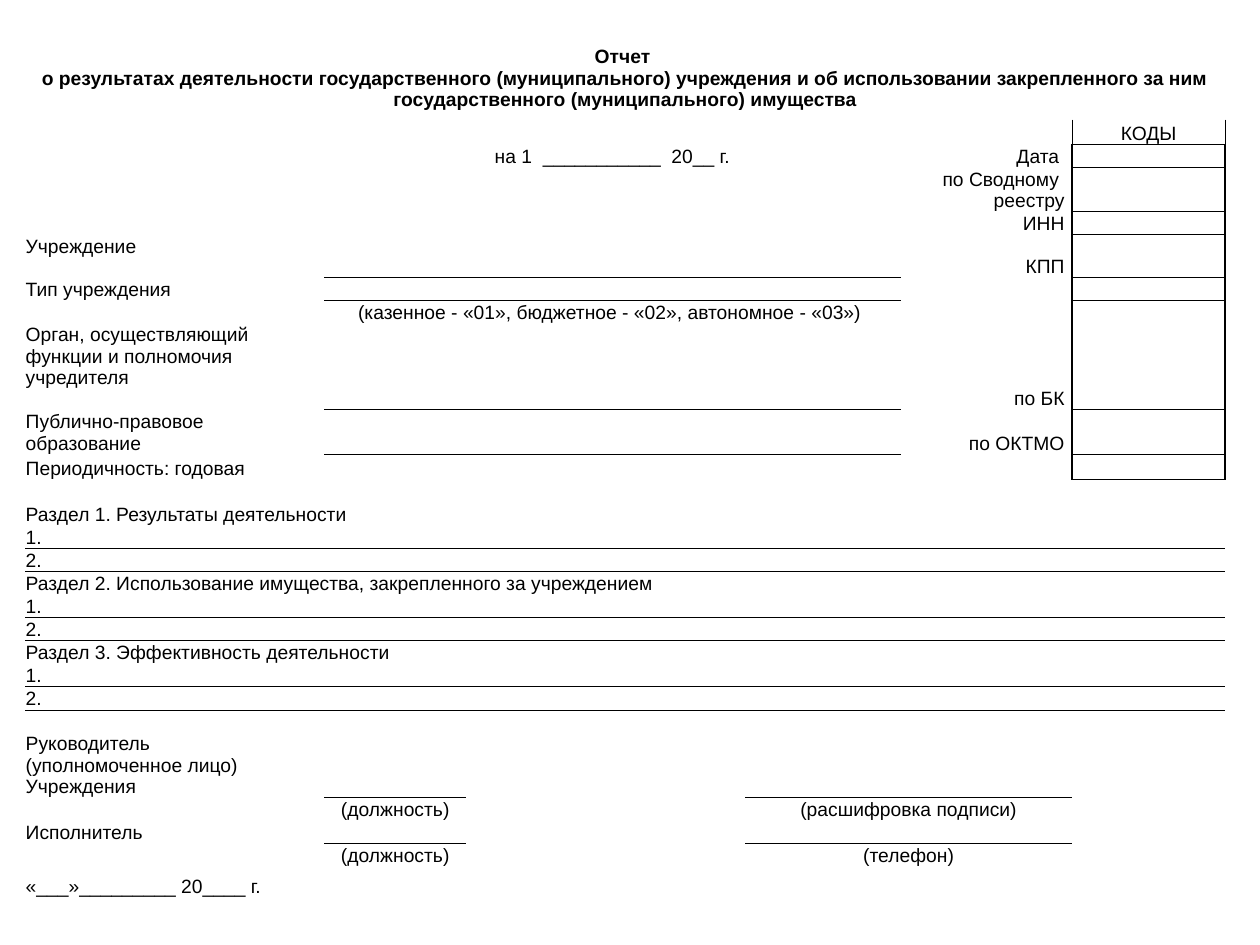
from lxml import etree
from pptx import Presentation
from pptx.dml.color import RGBColor
from pptx.enum import text as t
from pptx.oxml import ns
from pptx.util import Pt

THEME = {
    "font": "Arial", "size": 11, "empty": 8,
    "ink": "000000", "paper": "FFFFFF",
    "thin": 0.5, "bold": 1,
    "pad": 0.7, "side": 0.3, "gap": 4.3,
    "style": "{2D5ABB26-0587-4C30-8999-92F81FD0307C}",  # no style, no grid
}
LEFT, TOP = 14.4, 20.6
LINE = 13.2
COLS = [171, 81, 78, 81.5, 88.8, 98, 87.5]
ROWS = ([47.7, 14.2, 13.2, 25.1, 13.2, 24.6, 13.1, 13.1, 49.1, 25.7, 14.3]
        + [LINE] * 10 + [12.7, 36.7] + [LINE] * 3 + [22.3])

TITLE = ["Отчет ", "о результатах деятельности государственного (муниципального) "
         "учреждения и об использовании закрепленного за ним "
         "государственного (муниципального) имущества"]
DATE = "на 1  ___________  20__ г."
TYPES = "(казенное - «01», бюджетное - «02», автономное - «03») "
# row: lines of the label at the left
LABELS = {
    5: ["Учреждение"],
    6: ["Тип учреждения"],
    8: ["Орган, осуществляющий ", "функции и полномочия учредителя"],
    9: ["Публично-правовое образование"],
    10: ["Периодичность: годовая"],
    22: ["Руководитель ", "(уполномоченное лицо) Учреждения"],
    24: ["Исполнитель"],
    26: ["«___»_________ 20____ г."],
}
# row: lines of the label beside the code box
CODES = {
    2: ["Дата "],
    3: ["по Сводному ", "реестру"],
    4: ["ИНН"],
    5: ["КПП"],
    8: ["по БК"],
    9: ["по ОКТМО"],
}
PARTS = [
    "Раздел 1. Результаты деятельности",
    "Раздел 2. Использование имущества, закрепленного за учреждением",
    "Раздел 3. Эффективность деятельности",
]
ITEMS = ["1.", "2."]
# row, caption under the post line, caption under the wide line
SIGNS = [(23, "(должность)", "(расшифровка подписи)"),
         (25, "(должность)", "(телефон)")]

PART_ROW = 12
STEP = 1 + len(ITEMS)
CODE = 6
FIRST, LAST = 2, 10  # rows of the code box
MID, LOW, HIGH = (t.MSO_ANCHOR.MIDDLE, t.MSO_ANCHOR.BOTTOM, t.MSO_ANCHOR.TOP)
NEAR, MEET, FAR = t.PP_ALIGN.LEFT, t.PP_ALIGN.CENTER, t.PP_ALIGN.RIGHT


def write(grid, row, col, lines, span=1, align=NEAR, anchor=LOW,
          right=None, bold=False):
    cell = grid.cell(row, col)
    if span > 1:
        cell.merge(grid.cell(row, col + span - 1))
    cell.vertical_anchor = anchor
    if right is not None:
        cell.margin_right = Pt(right)
    para = cell.text_frame.paragraphs[0]
    para.alignment = align
    for i, line in enumerate(lines):
        if i:
            para.add_line_break()
        run = para.add_run()
        run.text = line
        run.font.name = THEME["font"]
        run.font.size = Pt(THEME["size"])
        run.font.bold = bold
        run.font.color.rgb = RGBColor.from_string(THEME["ink"])


def fill(grid):
    write(grid, 0, 0, TITLE, len(COLS), MEET, MID, bold=True)
    write(grid, 1, CODE, ["КОДЫ"], align=MEET)
    write(grid, 2, 1, [DATE], 4, MEET)
    write(grid, 7, 1, [TYPES], 4, MEET)
    for row, lines in LABELS.items():
        anchor = HIGH if row in (5, 8) else MID if row == 26 else LOW
        write(grid, row, 0, lines, anchor=anchor)
    for row, lines in CODES.items():
        write(grid, row, CODE - 1, lines, align=FAR, right=THEME["gap"])
    for i, part in enumerate(PARTS):
        row = PART_ROW + i * STEP
        write(grid, row, 0, [part], len(COLS))
        for j, item in enumerate(ITEMS, 1):
            write(grid, row + j, 0, [item])
    for row, post, wide in SIGNS:
        write(grid, row, 1, [post], align=MEET, anchor=HIGH)
        write(grid, row, 4, [wide], 2, MEET, HIGH)


def plan():
    """Map (row, column) to its border widths by side."""
    edges = {}

    def put(row, col, side, width):
        edges.setdefault((row, col), {})[side] = width

    def under(row, cols, width=THEME["thin"]):
        for col in cols:
            put(row, col, "B", width)
            put(row + 1, col, "T", width)

    for row in (5, 6, 8, 9):
        under(row, range(1, 5))
    for i in range(len(PARTS)):
        for j in range(1, STEP):
            under(PART_ROW + i * STEP + j, range(len(COLS)))
    for row, _, _ in SIGNS:
        under(row - 1, (1, 4, 5))
    for row in range(FIRST - 1, LAST + 1):
        width = THEME["thin" if row < FIRST else "bold"]
        put(row, CODE - 1, "R", width)
        put(row, CODE, "L", width)
        put(row, CODE, "R", width)
        if row != 7:
            ends = row in (FIRST - 1, LAST)
            under(row, [CODE], THEME["bold" if ends else "thin"])
    return edges


def rule(cell, sides):
    """Draw the given borders and switch the other sides off."""
    props = cell._tc.get_or_add_tcPr()
    for side in "LRTB":
        line = etree.SubElement(props, ns.qn("a:ln" + side))
        if side in sides:
            line.set("w", str(int(Pt(sides[side]))))
            paint = etree.SubElement(line, ns.qn("a:solidFill"))
            etree.SubElement(paint, ns.qn("a:srgbClr"), val=THEME["ink"])
            etree.SubElement(line, ns.qn("a:prstDash"), val="solid")
        else:
            etree.SubElement(line, ns.qn("a:noFill"))


def main():
    deck = Presentation()
    deck.slide_width, deck.slide_height = Pt(720), Pt(540)
    slide = deck.slides.add_slide(deck.slide_layouts[6])
    frame = slide.shapes.add_table(len(ROWS), len(COLS), Pt(LEFT), Pt(TOP),
                                   Pt(sum(COLS)), Pt(sum(ROWS)))
    grid = frame.table
    grid.first_row = grid.horz_banding = False
    grid._tbl.tblPr.find(ns.qn("a:tableStyleId")).text = THEME["style"]
    for col, width in zip(grid.columns, COLS):
        col.width = Pt(width)
    for row, height in zip(grid.rows, ROWS):
        row.height = Pt(height)

    edges = plan()
    for r in range(len(ROWS)):
        for c in range(len(COLS)):
            cell = grid.cell(r, c)
            cell.margin_left = cell.margin_right = Pt(THEME["side"])
            cell.margin_top, cell.margin_bottom = Pt(THEME["pad"]), 0
            rule(cell, edges.get((r, c), {}))
            cell.fill.solid()
            cell.fill.fore_color.rgb = RGBColor.from_string(THEME["paper"])
    fill(grid)
    for cell in grid.iter_cells():
        if not cell.text_frame.text:
            para = cell.text_frame.paragraphs[0]
            etree.SubElement(para._p, ns.qn("a:endParaRPr"),
                             sz=str(THEME["empty"] * 100))
    deck.save("out.pptx")


if __name__ == "__main__":
    main()
